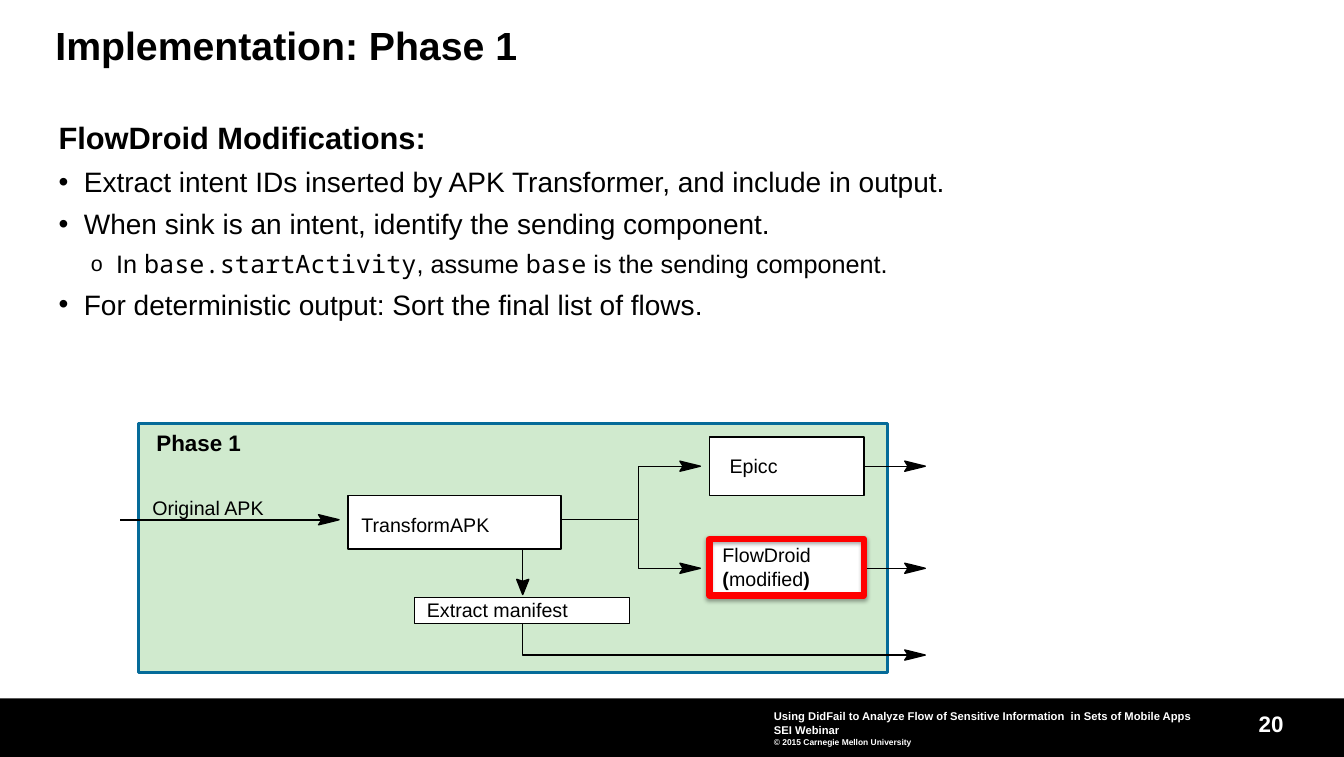
from lxml import etree
from pptx import Presentation
from pptx.dml.color import RGBColor
from pptx.enum import shapes, text
from pptx.oxml import ns
from pptx.util import Pt

COLOURS = {"ink": "000000", "paper": "FFFFFF", "panel": "D0EACE", "edge": "056B99", "accent": "FF0000"}
SANS, MONO = "Arial", "Noto Sans Mono"

TITLE = "Implementation: Phase 1"
# bullet, left margin, size, bold, runs as (text, font)
BODY = [
    (None, 0, 22, True, [("FlowDroid Modifications:", SANS)]),
    ("•", 18, 20, False, [("Extract intent IDs inserted by APK Transformer, and include in output.", SANS)]),
    ("•", 18, 20, False, [("When sink is an intent, identify the sending component.", SANS)]),
    ("o", 41, 18, False, [("In ", SANS), ("base.startActivity", MONO), (", assume ", SANS),
                          ("base", MONO), (" is the sending component.", SANS)]),
    ("•", 18, 20, False, [("For deterministic output: Sort the final list of flows.", SANS)]),
]
FOOTER = ["Using DidFail to Analyze Flow of Sensitive Information  in Sets of Mobile Apps", "SEI Webinar"]
COPYRIGHT = "© 2015 Carnegie Mellon University"
PAGE_NUMBER = "20"

# left, top, width, height
PANEL = (98.6, 302.4, 535, 177.1)
TRANSFORM = (248.4, 353.5, 151.9, 38.2)
EPICC = (506.2, 311.8, 110.2, 41.8)
FLOWDROID = (506.2, 384.5, 110.2, 41.8)
MANIFEST = (295.9, 426.2, 153.4, 18.7)
HIGHLIGHT = (506.2, 384.5, 110.2, 40.3)

# left, top, width, height, size, lines of (text, bold) runs
LABELS = [
    (257.8, 365.8, 92.2, 17.3, 14, [[("TransformAPK", False)]]),
    (515.5, 387.4, 63.4, 33.8, 14, [[("FlowDroid", False)], [("(", True), ("modified", False), (")", True)]]),
    (520.6, 324, 34.6, 17.3, 14, [[("Epicc", False)]]),
    (108.7, 353.5, 80, 17.3, 14, [[("Original APK", False)]]),
    (304.6, 426.2, 101.5, 17.3, 14, [[("Extract manifest", False)]]),
    (111.6, 306, 61.2, 19.4, 16, [[("Phase 1", True)]]),
]

ROW_APK, ROW_EPICC, ROW_FLOW, ROW_MANIFEST = 370.8, 332.6, 405.4, 467.3
FORK, DROP, EXIT, ENTRY = 455.8, 373, 660.2, 499.7
BOX_RIGHT = 616.7
# Each route ends at the tip of its arrowhead
ROUTES = [
    [(400.3, ROW_APK), (FORK, ROW_APK), (FORK, ROW_EPICC), (ENTRY, ROW_EPICC)],
    [(FORK, ROW_APK), (FORK, ROW_FLOW), (ENTRY, ROW_FLOW)],
    [(BOX_RIGHT, ROW_EPICC), (EXIT, ROW_EPICC)],
    [(BOX_RIGHT, ROW_FLOW), (EXIT, ROW_FLOW)],
    [(85.7, ROW_APK), (241.9, ROW_APK)],
    [(DROP, 444.9), (DROP, ROW_MANIFEST), (EXIT, ROW_MANIFEST)],
    [(DROP, 391.7), (DROP, 424.1)],
]
# length, notch distance and half width, all measured from the tip
HEAD_RIGHT = (14.6, 12.2, 3.6)
HEAD_DOWN = (10.8, 9.4, 4.3)


def colour(name):
    return RGBColor.from_string(COLOURS[name])


def paint(shape, fill, line, width=1):
    shape.shadow.inherit = False
    if fill:
        shape.fill.solid()
        shape.fill.fore_color.rgb = colour(fill)
    else:
        shape.fill.background()
    if line:
        shape.line.color.rgb = colour(line)
        shape.line.width = Pt(width)
    else:
        shape.line.fill.background()
    return shape


def add_box(page, area, fill="paper", line="ink", width=1):
    box = page.shapes.add_shape(shapes.MSO_SHAPE.RECTANGLE, *map(Pt, area))
    return paint(box, fill, line, width)


def set_frame(shape, margins=(0, 0, 0, 0), wrap=True, anchor=text.MSO_ANCHOR.TOP):
    frame = shape.text_frame
    frame.margin_left, frame.margin_top, frame.margin_right, frame.margin_bottom = map(Pt, margins)
    frame.word_wrap = wrap
    frame.auto_size = text.MSO_AUTO_SIZE.NONE
    frame.vertical_anchor = anchor
    return frame


def add_text(page, area, **options):
    return set_frame(page.shapes.add_textbox(*map(Pt, area)), **options)


def next_para(frame, index):
    return frame.add_paragraph() if index else frame.paragraphs[0]


def add_span(para, words, size, bold=False, ink="ink", font=SANS):
    span = para.add_run()
    span.text = words
    span.font.name, span.font.size, span.font.bold = font, Pt(size), bold
    span.font.color.rgb = colour(ink)


def add_bullet(para, mark, margin):
    props = para._p.get_or_add_pPr()
    props.set("marL", str(Pt(margin)))
    props.set("indent", str(-Pt(18)))
    if mark == "o":
        etree.SubElement(props, ns.qn("a:buSzPct")).set("val", "85000")
    etree.SubElement(props, ns.qn("a:buFont")).set("typeface", SANS)
    etree.SubElement(props, ns.qn("a:buChar")).set("char", mark)


def add_outline(page, points, closed, fill=None):
    corners = [(Pt(x), Pt(y)) for x, y in points]
    builder = page.shapes.build_freeform(*corners[0], scale=1.0)
    builder.add_line_segments(corners[1:], close=closed)
    return paint(builder.convert_to_shape(), fill, "ink")


def add_route(page, points):
    """Draw a wire with a notched arrowhead on its last point."""
    (before_x, before_y), (tip_x, tip_y) = points[-2:]
    down = before_x == tip_x
    length, notch, half = HEAD_DOWN if down else HEAD_RIGHT

    def behind(back, side):
        return (tip_x + side, tip_y - back) if down else (tip_x - back, tip_y + side)

    wire = points[:-1] + [behind(8, 0)]
    if len(wire) == 2:
        ends = [Pt(value) for point in wire for value in point]
        line = page.shapes.add_connector(shapes.MSO_CONNECTOR.STRAIGHT, *ends)
        line.line.color.rgb = colour("ink")
        line.line.width = Pt(1)
        etree.SubElement(line._element.spPr, ns.qn("a:effectLst"))
    else:
        add_outline(page, wire, False)
    add_outline(page, [behind(length, -half), (tip_x, tip_y), behind(length, half), behind(notch, 0)], True, "ink")


def add_glow(shape):
    """Give the highlighted box a soft shadow below it."""
    effects = shape._element.spPr.find(ns.qn("a:effectLst"))
    shadow = etree.SubElement(effects, ns.qn("a:outerShdw"), blurRad=str(Pt(3.1)),
                              dist=str(Pt(1.8)), dir="5400000", rotWithShape="0")
    tint = etree.SubElement(shadow, ns.qn("a:srgbClr"), val=COLOURS["ink"])
    etree.SubElement(tint, ns.qn("a:alpha"), val="35000")


def add_footer(page):
    add_box(page, (0, 498.2, 959, 41.8), "ink", None)
    frame = add_text(page, (870.5, 512.6, 45.4, 13), anchor=text.MSO_ANCHOR.MIDDLE)
    para = frame.paragraphs[0]
    para.alignment, para.line_spacing = text.PP_ALIGN.RIGHT, Pt(13)
    add_span(para, PAGE_NUMBER, 16, True, "paper")
    frame = add_text(page, (552.2, 502.6, 325.4, 33.8), margins=(0, 3.6, 3.6, 3.6), anchor=text.MSO_ANCHOR.MIDDLE)
    para = frame.paragraphs[0]
    add_span(para, FOOTER[0], 8, True, "paper")
    para.add_line_break()
    add_span(para, FOOTER[1], 8, True, "paper")
    add_span(frame.add_paragraph(), COPYRIGHT, 6, True, "paper")


def add_title(page):
    title = page.shapes.title
    title.left, title.top, title.width, title.height = map(Pt, (39.6, 18.7, 887.8, 31))
    para = set_frame(title).paragraphs[0]
    para.alignment, para.line_spacing = text.PP_ALIGN.LEFT, 0.9
    add_span(para, TITLE, 28, True)


def add_body(page):
    frame = add_text(page, (41.8, 85, 874, 182.9))
    for index, (mark, margin, size, bold, spans) in enumerate(BODY):
        para = next_para(frame, index)
        if mark:
            add_bullet(para, mark, margin)
        para.space_after = Pt(6)
        for words, font in spans:
            add_span(para, words, size, bold, font=font)


def add_diagram(page):
    add_box(page, PANEL, "panel", "edge", 2)
    for area in (TRANSFORM, EPICC, FLOWDROID, MANIFEST):
        add_box(page, area)
    for points in ROUTES:
        add_route(page, points)
    for *area, size, lines in LABELS:
        frame = add_text(page, area, wrap=False)
        for index, spans in enumerate(lines):
            para = next_para(frame, index)
            for words, bold in spans:
                add_span(para, words, size, bold)
    add_glow(add_box(page, HIGHLIGHT, None, "accent", 4.5))


def main():
    deck = Presentation()
    deck.slide_width, deck.slide_height = Pt(959), Pt(540)
    page = deck.slides.add_slide(deck.slide_layouts[5])
    add_footer(page)
    add_title(page)
    add_body(page)
    add_diagram(page)
    deck.save("out.pptx")


if __name__ == "__main__":
    main()
